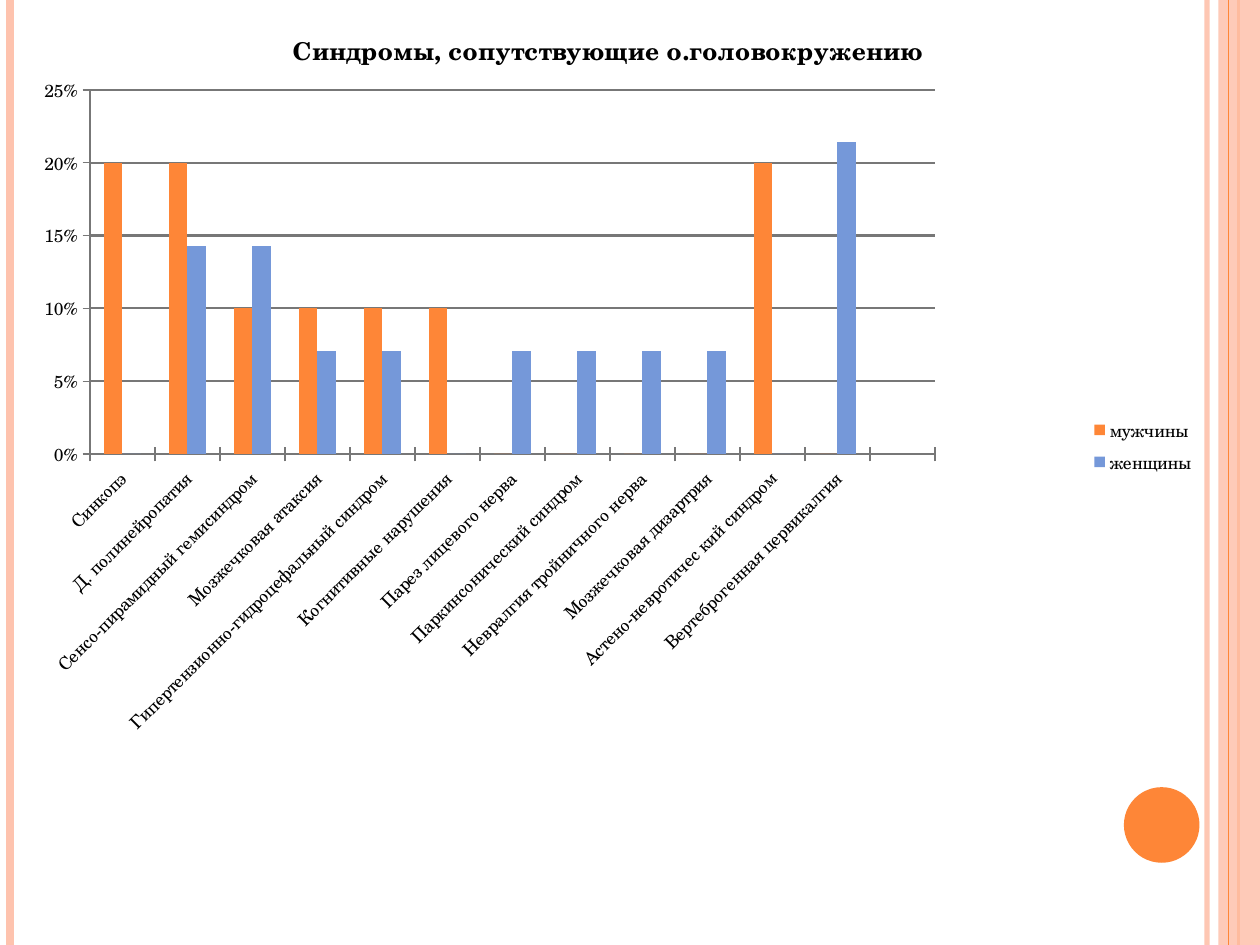
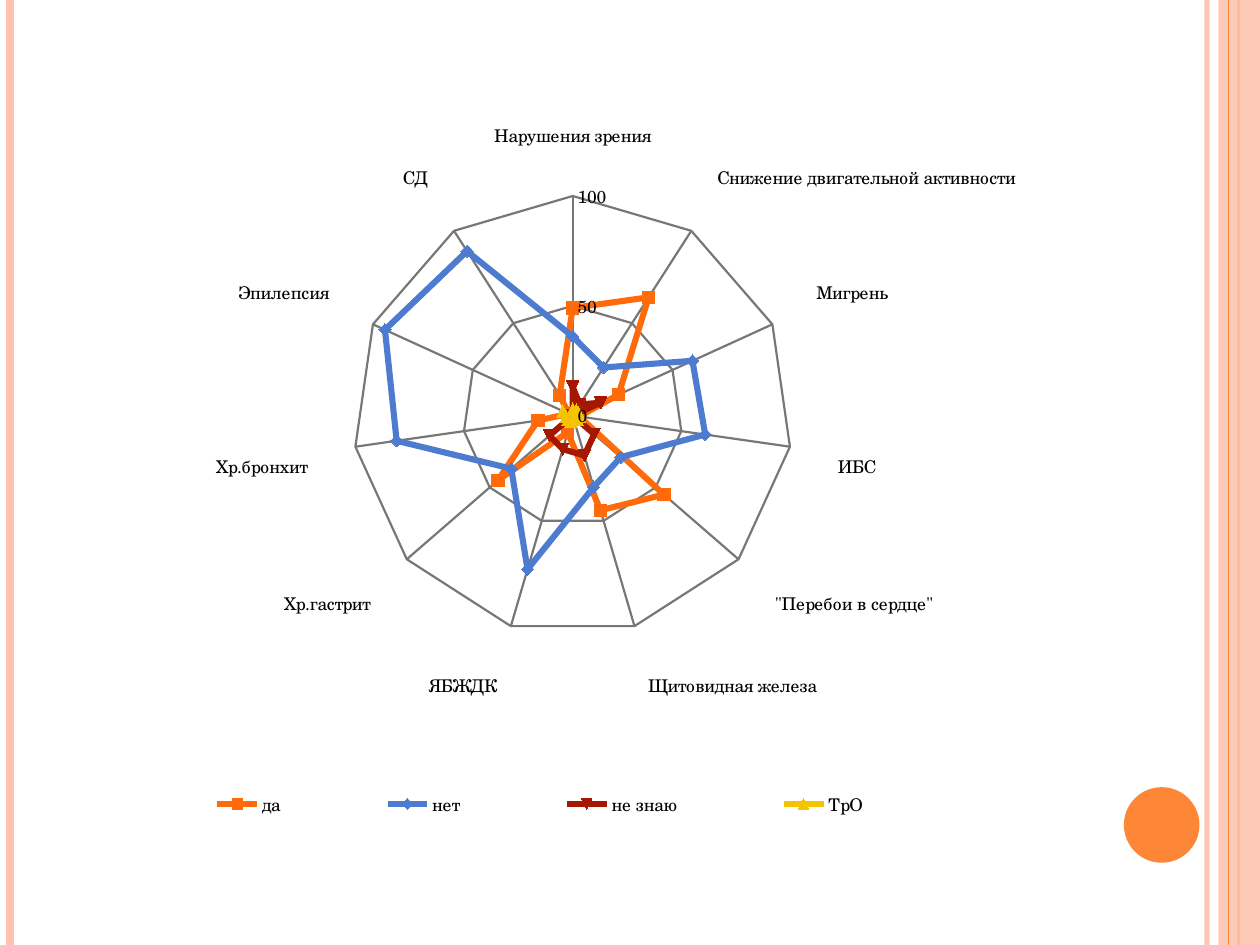
from lxml import etree
from pptx import Presentation
from pptx.chart.data import CategoryChartData
from pptx.dml.color import RGBColor
from pptx.enum.chart import XL_CHART_TYPE, XL_LEGEND_POSITION, XL_TICK_MARK
from pptx.enum.shapes import MSO_CONNECTOR, MSO_SHAPE
from pptx.oxml.ns import qn
from pptx.util import Inches, Pt

COLUMNS = XL_CHART_TYPE.COLUMN_CLUSTERED
RADAR = XL_CHART_TYPE.RADAR_MARKERS
LEGEND_RIGHT = XL_LEGEND_POSITION.RIGHT
LEGEND_BOTTOM = XL_LEGEND_POSITION.BOTTOM
TICK_CROSS = XL_TICK_MARK.CROSS
TICK_NONE = XL_TICK_MARK.NONE
STRAIGHT = MSO_CONNECTOR.STRAIGHT
RECTANGLE = MSO_SHAPE.RECTANGLE
OVAL = MSO_SHAPE.OVAL

WIDTH, HEIGHT = Inches(10), Inches(7.5)
FONT = "TeX Gyre Schola"
BLACK, GRID_GREY = "000000", "777777"
PEACH, ORANGE, BLUE = "FEC3AE", "FE8637", "7598D9"
RADAR_ORANGE, RADAR_BLUE, RADAR_RED, RADAR_YELLOW = "FF6A0A", "4D7BD0", "A51700", "F5C400"

SYNDROMES = {
    "Синкопэ": (0.2, 0),
    "Д. полинейропатия": (0.2, 0.143),
    "Сенсо-пирамидный гемисиндром": (0.1, 0.143),
    "Мозжечковая атаксия": (0.1, 0.071),
    "Гипертензионно-гидроцефальный синдром": (0.1, 0.071),
    "Когнитивные нарушения": (0.1, 0),
    "Парез лицевого нерва": (0, 0.071),
    "Паркинсонический синдром": (0, 0.071),
    "Невралгия тройничного нерва": (0, 0.071),
    "Мозжечковая дизартрия": (0, 0.071),
    "Астено-невротичес кий синдром": (0.2, 0),
    "Вертеброгенная цервикалгия": (0, 0.214),
    "": (None, None),
}
SEXES = {"мужчины": ORANGE, "женщины": BLUE}

CONDITIONS = {
    "Нарушения зрения": (49, 36, 13, 3),
    "Снижение двигательной активности": (64, 26, 6, 3),
    "Мигрень": (23, 60, 14, 3),
    "ИБС": (3, 61, 0, 3),
    '"Перебои в сердце"': (55, 29, 13, 3),
    "Щитовидная железа": (45, 34, 19, 2),
    "ЯБЖДК": (8, 73, 16, 3),
    "Хр.гастрит": (45, 37, 14, 3),
    "Хр.бронхит": (16, 81, 0, 3),
    "Эпилепсия": (2, 94, 0, 5),
    "СД": (11, 89, 0, None),
}
ANSWERS = {"да": RADAR_ORANGE, "нет": RADAR_BLUE, "не знаю": RADAR_RED, "ТрО": RADAR_YELLOW}


def color(code):
    return RGBColor.from_string(code)


def format_font(font, size=10, bold=False, code=BLACK):
    font.name, font.size, font.bold = FONT, Pt(size), bold
    font.color.rgb = color(code)


def write_text(frame, text, **style):
    para = frame.paragraphs[0]
    span = para.add_run()
    span.text = text
    format_font(span.font, **style)


def format_line(line, code, width):
    line.color.rgb = color(code)
    line.width = Pt(width)


def set_opacity(properties, percent):
    fill = properties.find(".//" + qn("a:srgbClr"))
    etree.SubElement(fill, qn("a:alpha"), val=str(percent * 1000))


def place_part(part, index, shares, inner=False):
    for old in part.findall(qn("c:layout")):
        part.remove(old)
    layout = etree.Element(qn("c:layout"))
    manual = etree.SubElement(layout, qn("c:manualLayout"))
    settings = [("layoutTarget", "inner")] if inner else []
    settings += [("xMode", "edge"), ("yMode", "edge")]
    settings += zip("xywh", shares)
    for name, value in settings:
        etree.SubElement(manual, qn("c:" + name), val=str(value))
    part.insert(index, layout)


class Deck:
    def __init__(self):
        self.deck = Presentation()
        self.deck.slide_width, self.deck.slide_height = WIDTH, HEIGHT
        self.page = None

    def add_page(self):
        self.page = self.deck.slides.add_slide(self.deck.slide_layouts[6])
        self.rule(0.958, PEACH, 3, opacity=93)
        self.rule(0.008, PEACH, 4.5)
        self.rule(0.983, ORANGE, 1.5)
        self.shape(RECTANGLE, 0.967, 0, 0.033, 1, PEACH, opacity=87)
        self.rule(0.975, ORANGE, 0.75)
        self.shape(OVAL, 0.892, 0.833, 0.06, 0.08, ORANGE)

    def rule(self, across, code, width, opacity=100):
        left = int(WIDTH * across)
        rule = self.page.shapes.add_connector(STRAIGHT, left, 0, left, HEIGHT)
        format_line(rule.line, code, width)
        properties = rule._element.spPr
        if opacity < 100:
            set_opacity(properties, opacity)
        etree.SubElement(properties, qn("a:effectLst"))

    def shape(self, kind, left, top, width, height, code, opacity=100):
        box = self.page.shapes.add_shape(
            kind, int(WIDTH * left), int(HEIGHT * top), int(WIDTH * width), int(HEIGHT * height))
        box.shadow.inherit = False
        box.fill.solid()
        box.fill.fore_color.rgb = color(code)
        box.line.fill.background()
        if opacity < 100:
            set_opacity(box._element.spPr, opacity)

    def chart(self, kind, width, height, rows, names, plot, legend_position, legend_place):
        data = CategoryChartData()
        data.categories = list(rows)
        for name, values in zip(names, zip(*rows.values())):
            data.add_series(name, values)
        chart = self.page.shapes.add_chart(
            kind, 0, 0, int(WIDTH * width), int(HEIGHT * height), data).chart
        format_font(chart.font)
        chart.has_title = False
        chart.has_legend = True
        chart.legend.position = legend_position
        chart.legend.include_in_layout = False
        place_part(chart.legend._element, 1, legend_place)
        place_part(chart._chartSpace.chart.plotArea, 0, plot, inner=True)
        chart.plots[0].vary_by_categories = False
        return chart

    def axis(self, axis, tick, grid, width, top=None, step=None):
        axis.major_tick_mark, axis.minor_tick_mark = tick, TICK_NONE
        axis.has_major_gridlines = grid
        format_line(axis.format.line, GRID_GREY, width)
        if grid:
            format_line(axis.major_gridlines.format.line, GRID_GREY, 1.25)
        if top:
            axis.minimum_scale, axis.maximum_scale, axis.major_unit = 0, top, step

    def column_chart(self, title, rows, names):
        chart = self.chart(COLUMNS, 0.965, 0.944, rows, names, (0.074, 0.101, 0.695, 0.408),
                           LEGEND_RIGHT, (0.89, 0.46, 0.1, 0.08))
        chart.has_title = True
        write_text(chart.chart_title.text_frame, title, size=14, bold=True)
        chart.chart_title.include_in_layout = False
        self.axis(chart.category_axis, TICK_CROSS, False, 0.75)
        self.axis(chart.value_axis, TICK_CROSS, True, 0.75, 0.25, 0.05)
        labels = chart.value_axis.tick_labels
        labels.number_format, labels.number_format_is_linked = "0%", False
        format_font(chart.category_axis.tick_labels.font)
        turned = chart.category_axis._element.find(".//" + qn("a:bodyPr"))
        turned.set("rot", "-2700000")
        turned.set("vert", "horz")
        chart.plots[0].gap_width, chart.plots[0].overlap = 150, 0
        for series, code in zip(chart.series, names.values()):
            series.format.fill.solid()
            series.format.fill.fore_color.rgb = color(code)

    def radar_chart(self, rows, names):
        chart = self.chart(RADAR, 0.922, 0.905, rows, names, (0.304, 0.062, 0.378, 0.848),
                           LEGEND_BOTTOM, (0.1, 0.91, 0.73, 0.06))
        self.axis(chart.category_axis, TICK_NONE, True, 1.25)
        self.axis(chart.value_axis, TICK_NONE, True, 1.25, 100, 50)
        for series, code in zip(chart.series, names.values()):
            series.smooth = False
            format_line(series.format.line, code, 3.5)
            series.marker.size = 7
            series.marker.format.fill.solid()
            series.marker.format.fill.fore_color.rgb = color(code)
            format_line(series.marker.format.line, code, 0.75)

    def save(self):
        self.deck.save("out.pptx")


def main():
    deck = Deck()
    deck.add_page()
    deck.column_chart("Синдромы, сопутствующие о.головокружению", SYNDROMES, SEXES)
    deck.add_page()
    deck.radar_chart(CONDITIONS, ANSWERS)
    deck.save()


if __name__ == "__main__":
    main()
